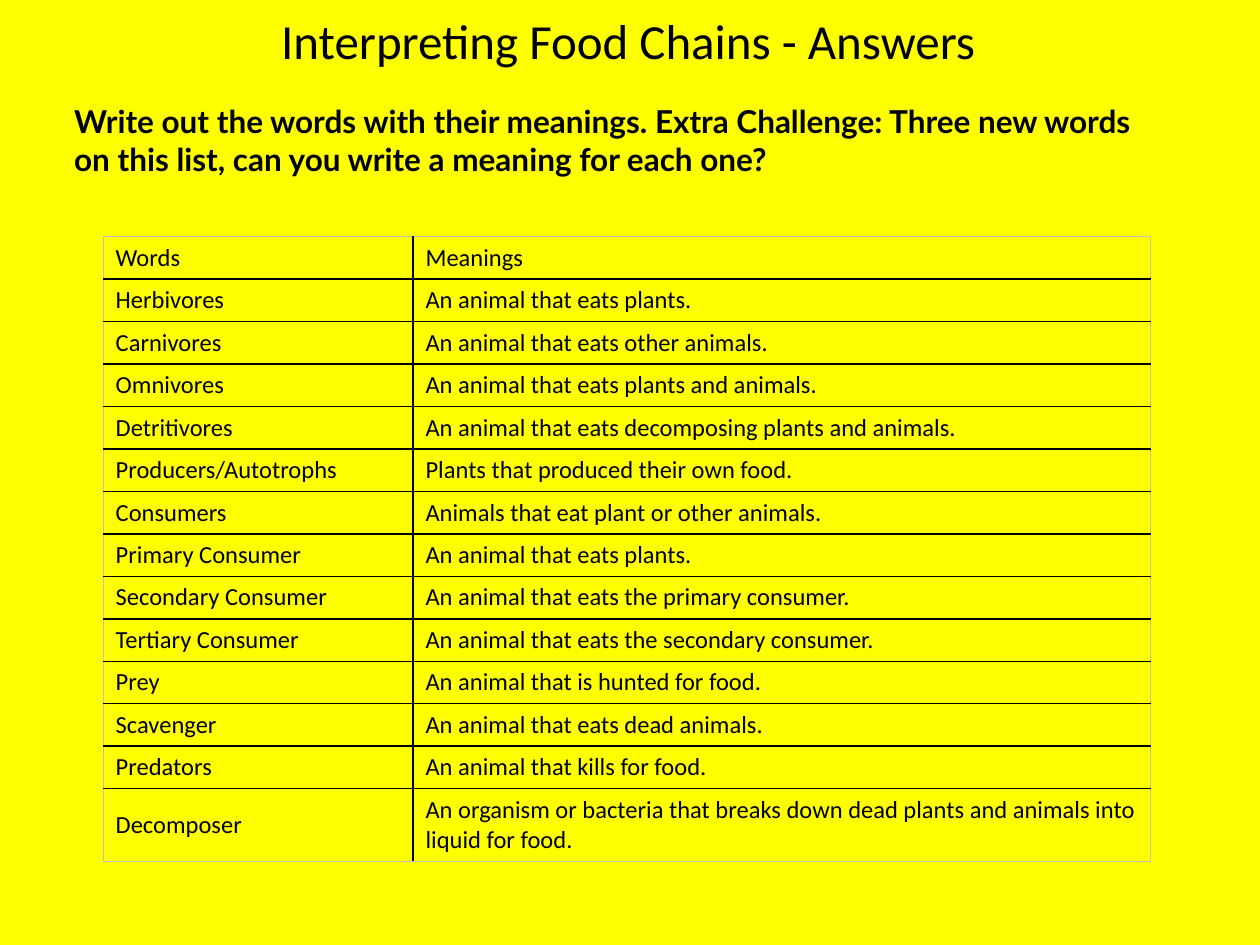
from lxml import etree
from pptx import Presentation
from pptx.dml.color import RGBColor
from pptx.enum.text import MSO_ANCHOR, PP_ALIGN
from pptx.oxml.ns import qn
from pptx.util import Pt

MIDDLE = MSO_ANCHOR.MIDDLE
CENTER = PP_ALIGN.CENTER
TITLE_ONLY = 5
BLACK, YELLOW, GREY = "000000", "FFFF00", "C0C0C0"


def color(hex_value):
    return RGBColor.from_string(hex_value)


def write(frame, text, formats):
    paragraph = frame.paragraphs[0]
    run = paragraph.add_run()
    run.text = text
    run.font.color.rgb = color(BLACK)
    for key, value in formats.items():
        setattr(run.font, key, value)
    return paragraph


deck = Presentation()
deck.slide_width, deck.slide_height = Pt(720), Pt(540)
slide = deck.slides.add_slide(deck.slide_layouts[TITLE_ONLY])
slide.background.fill.solid()
slide.background.fill.fore_color.rgb = color(YELLOW)

# Title
heading = slide.shapes.title
heading.left, heading.top, heading.width, heading.height = Pt(35.3), Pt(0.7), Pt(647.3), Pt(44.6)
heading.text_frame.vertical_anchor = MIDDLE
write(heading.text_frame, "Interpreting Food Chains - Answers",
      {"name": "Calibri", "size": Pt(28)}).alignment = CENTER

# Vocabulary table
vocabulary = [
    ("Words", "Meanings"),
    ("Herbivores", "An animal that eats plants."),
    ("Carnivores", "An animal that eats other animals."),
    ("Omnivores", "An animal that eats plants and animals."),
    ("Detritivores", "An animal that eats decomposing plants and animals."),
    ("Producers/Autotrophs", "Plants that produced their own food."),
    ("Consumers", "Animals that eat plant or other animals."),
    ("Primary Consumer", "An animal that eats plants."),
    ("Secondary Consumer", "An animal that eats the primary consumer."),
    ("Tertiary Consumer", "An animal that eats the secondary consumer."),
    ("Prey", "An animal that is hunted for food."),
    ("Scavenger", "An animal that eats dead animals."),
    ("Predators", "An animal that kills for food."),
    ("Decomposer", "An organism or bacteria that breaks down dead plants "
                   "and animals into liquid for food."),
]
last_row = len(vocabulary) - 1
row_height, last_height = 24.2, 41
glossary = slide.shapes.add_table(
    len(vocabulary), 2, Pt(58.9), Pt(135.2), Pt(598.4),
    Pt(row_height * last_row + last_height)).table
glossary.first_row = glossary.horz_banding = False
for column, width in zip(glossary.columns, (177.1, 421.3)):
    column.width = Pt(width)

cell_font = {"name": "Calibri", "size": Pt(14), "bold": False}
for r, entry in enumerate(vocabulary):
    glossary.rows[r].height = Pt(last_height if r == last_row else row_height)
    for c, text in enumerate(entry):
        cell = glossary.cell(r, c)
        cell.vertical_anchor = MIDDLE
        cell.margin_top = cell.margin_bottom = Pt(3.6)
        cell.fill.background()
        write(cell.text_frame, text, cell_font)

        # Black rules inside, pale outline outside
        outer_sides = {"lnL": c == 0, "lnR": c == 1, "lnT": r == 0, "lnB": r == last_row}
        properties = cell._tc.get_or_add_tcPr()
        for position, (side, is_outer) in enumerate(outer_sides.items()):
            line = etree.Element(qn(f"a:{side}"), w=str(Pt(0.5 if is_outer else 1)))
            fill = etree.SubElement(line, qn("a:solidFill"))
            etree.SubElement(fill, qn("a:srgbClr"), val=GREY if is_outer else BLACK)
            properties.insert(position, line)

# Instructions
instructions = slide.shapes.add_textbox(Pt(35.3), Pt(54.7), Pt(636.5), Pt(51.1))
instructions.text_frame.word_wrap = True
write(instructions.text_frame,
      "Write out the words with their meanings. Extra Challenge: Three new words "
      "on this list, can you write a meaning for each one?",
      {"name": "Lato", "size": Pt(18), "bold": True})

deck.save("out.pptx")
